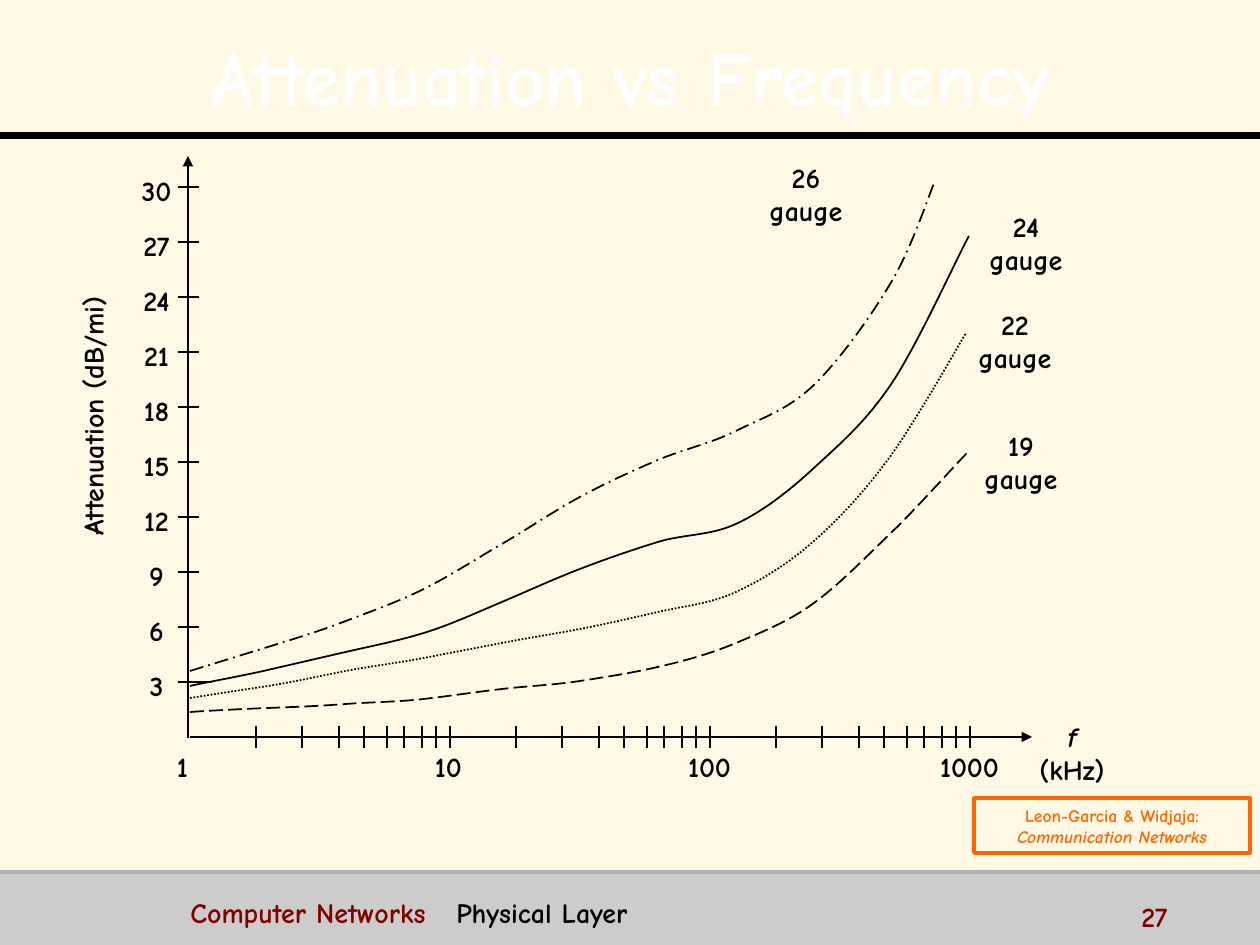
from lxml.etree import SubElement
from pptx import Presentation
from pptx.dml.color import RGBColor
from pptx.enum.dml import MSO_LINE as DASH
from pptx.enum.shapes import MSO_CONNECTOR, MSO_SHAPE
from pptx.enum.text import MSO_ANCHOR as ANCHOR, PP_ALIGN as ALIGN
from pptx.oxml.ns import qn
from pptx.util import Emu, Pt

SCALE = 914400 / 126  # EMU per px
FONT = "Comic Neue"
BLACK, MAROON, ORANGE = "000000", "800000", "FF6600"
px = lambda n: Emu(round(n * SCALE))
rgb = RGBColor.from_string

prs = Presentation()
prs.slide_width, prs.slide_height = px(1260), px(945)
slide = prs.slides.add_slide(prs.slide_layouts[5])
shapes = slide.shapes
slide.background.fill.solid()
slide.background.fill.fore_color.rgb = rgb("FFF9E6")


def add_line(x1, y1, x2, y2, color=BLACK, width=1, arrow=False):
    line = shapes.add_connector(MSO_CONNECTOR.STRAIGHT, px(x1), px(y1), px(x2), px(y2))
    line.line.color.rgb = rgb(color)
    line.line.width = Pt(width)
    if arrow:
        SubElement(line.line._get_or_add_ln(), qn("a:tailEnd"), type="triangle")
    SubElement(line._element.spPr, qn("a:effectLst"))


def add_label(text, left, top, width, height, anchor=ANCHOR.TOP, align=ALIGN.CENTER, color=BLACK):
    box = shapes.add_textbox(px(left), px(top), px(width), px(height))
    box.text_frame.word_wrap = True
    box.text_frame.vertical_anchor = anchor
    p = box.text_frame.paragraphs[0]
    p.text = text
    p.alignment = align
    p.font.name, p.font.size, p.font.bold = FONT, Pt(16), True
    p.font.color.rgb = rgb(color)
    return box


# Footer band and rules
band = shapes.add_shape(MSO_SHAPE.RECTANGLE, px(0), px(872), px(1260), px(73))
band.shadow.inherit = False
band.fill.solid()
band.fill.fore_color.rgb = rgb("CCCCCC")
band.line.fill.background()
add_line(0, 136, 1260, 136, width=4)
add_line(0, 872, 1260, 872, "B2B2B2", 2)

# Title with a text shadow
title = shapes.title
title.left, title.top, title.width, title.height = px(25), px(16), px(1211), px(110)
title.text_frame.text = "Attenuation vs Frequency"
title.text_frame.vertical_anchor = ANCHOR.MIDDLE
heading = title.text_frame.paragraphs[0]
heading.alignment, heading.line_spacing = ALIGN.CENTER, 1.1
face = heading.runs[0].font
face.size, face.bold = Pt(44), True
face.color.rgb = rgb("FFFFFF")
effects = SubElement(face._element, qn("a:effectLst"))
shadow = SubElement(effects, qn("a:outerShdw"), dist="35921", dir="2700000")
SubElement(shadow, qn("a:srgbClr"), val=BLACK)
face.name = FONT

# Axes
add_line(190, 737, 1032, 737, arrow=True)
add_line(188, 738, 188, 156, arrow=True)

# Attenuation ticks, 30 down to 3 dB/mi
for i in range(10):
    y = 187 + 55 * i
    add_line(178, y, 199, y)
    add_label(str(30 - 3 * i), 120, y - 20, 73, 46, ANCHOR.MIDDLE)
add_line(194, 682, 212, 682)

# Frequency ticks, three decades
for decade in range(3):
    for offset in (68, 114, 151, 176, 199, 216, 234, 248, 262):
        x = 188 + 260 * decade + offset
        add_line(x, 748, x, 726)
for frequency, left, width in (("1", 146, 73), ("10", 412, 73), ("100", 673, 73), ("1000", 912, 115)):
    add_label(frequency, left, 743, width, 46, ANCHOR.MIDDLE)

# Gauge curves: heights at even steps along the axis, and where each curve ends
curves = [
    (DASH.LONG_DASH, 968, [712, 708, 704, 699, 689, 681, 667, 643, 603, 532, 452]),
    (DASH.LONG_DASH_DOT, 935, [671, 647, 621, 589, 544, 497, 460, 431, 385, 281, 181]),
    (DASH.ROUND_DOT, 966, [698, 686, 671, 658, 643, 629, 612, 592, 541, 454, 333]),
    (DASH.SOLID, 969, [686, 670, 652, 633, 602, 569, 542, 524, 468, 383, 236]),
]
for dash, end, heights in curves:
    knots = [(190 + 78 * i, y) for i, y in enumerate(heights)]
    knots[-1] = (end, heights[-1])
    padded = [knots[0], *knots, knots[-1]]
    # Smooth through the knots: two control points, then the next knot
    points = []
    for before, a, b, after in zip(padded, padded[1:], padded[2:], padded[3:]):
        points.append([p + (q - o) / 6 for o, p, q in zip(before, a, b)])
        points.append([q - (r - p) / 6 for p, q, r in zip(a, b, after)])
        points.append(b)
    builder = shapes.build_freeform(*knots[0], scale=SCALE)
    builder.add_line_segments(points, close=False)
    curve = builder.convert_to_shape()
    curve.shadow.inherit = False
    curve.fill.background()
    curve.line.color.rgb = rgb(BLACK)
    curve.line.width = Pt(1)
    curve.line.dash_style = dash
    # Turn each three straight segments into one cubic segment
    outline = curve._element.xpath(".//a:path")[0]
    steps = outline.findall(qn("a:lnTo"))
    for i in range(0, len(steps), 3):
        cubic = SubElement(outline, qn("a:cubicBezTo"))
        for step in steps[i:i + 3]:
            cubic.append(step[0])
            outline.remove(step)

# Curve and axis labels
for gauge, left, top in ((19, 971, 422), (22, 965, 301), (24, 976, 203), (26, 756, 154)):
    add_label(f"{gauge} gauge", left, top, 100, 80)
add_label("Attenuation (dB/mi)", -55, 393, 295, 46).rotation = 270
unit = add_label("f", 1025, 713, 94, 80).text_frame.paragraphs[0]
unit.runs[0].font.italic = True
unit.add_run().text = " (kHz)"

# Source box
source = shapes.add_shape(MSO_SHAPE.RECTANGLE, px(974), px(798), px(276), px(55))
source.shadow.inherit = False
source.fill.background()
source.line.color.rgb = rgb(ORANGE)
source.line.width = Pt(2)
source.text_frame.text = "Leon-Garcia & Widjaja:\nCommunication Networks"
source.text_frame.vertical_anchor = ANCHOR.MIDDLE
for p in source.text_frame.paragraphs:
    p.alignment = ALIGN.CENTER
    p.font.name, p.font.size, p.font.bold = FONT, Pt(10), True
    p.font.color.rgb = rgb(ORANGE)
source.text_frame.paragraphs[1].font.italic = True

# Footer text
add_label("27", 1129, 893, 126, 32, align=ALIGN.LEFT, color=MAROON)
footer = add_label("", 178, 889, 917, 39, align=ALIGN.LEFT, color=MAROON).text_frame.paragraphs[0]
tabs = footer._p.get_or_add_pPr()
tab_list = SubElement(tabs, qn("a:tabLst"))
SubElement(tab_list, qn("a:tab"), pos=str(px(266)), algn="l")
tabs.insert(0, tab_list)
footer.add_run().text = "Computer Networks\t"
topic = footer.add_run()
topic.text = "Physical Layer"
topic.font.color.rgb = rgb(BLACK)

prs.save("out.pptx")
